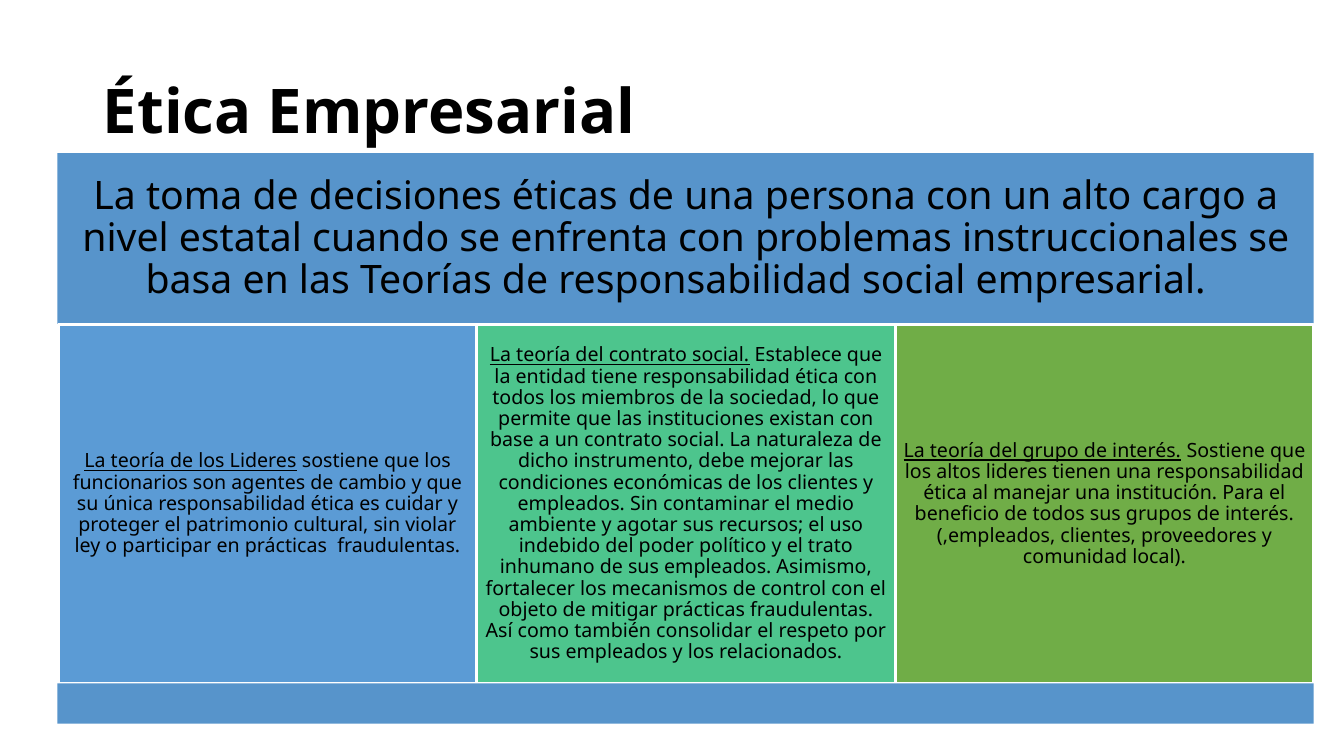
from dataclasses import dataclass

import pptx
import pptx.dml.color
import pptx.enum.shapes
import pptx.enum.text
import pptx.shapes.autoshape
import pptx.slide
import pptx.text.text
import pptx.util

Inches = pptx.util.Inches
RGBColor = pptx.dml.color.RGBColor
Align = pptx.enum.text.PP_ALIGN

BLACK = RGBColor(0x00, 0x00, 0x00)
WHITE = RGBColor(0xFF, 0xFF, 0xFF)
BAND_BLUE = RGBColor(0x57, 0x94, 0xCB)
LEADERS_BLUE = RGBColor(0x5B, 0x9B, 0xD5)
CONTRACT_GREEN = RGBColor(0x4D, 0xC5, 0x8D)
INTEREST_GREEN = RGBColor(0x70, 0xAD, 0x47)

FONT = "Noto Sans"
BAND_LEFT, BAND_WIDTH = 0.57, 12.46
THEORY_LEFT, THEORY_TOP = 0.58, 3.22
THEORY_WIDTH, THEORY_HEIGHT = 4.15, 3.56


@dataclass(frozen=True)
class Theory:
    name: str
    description: str
    color: RGBColor


INTRODUCTION = (
    "La toma de decisiones éticas de una persona con un alto cargo a nivel estatal "
    "cuando se enfrenta con problemas instruccionales se basa en las Teorías de "
    "responsabilidad social empresarial.  "
)

THEORIES = [
    Theory(
        "La teoría de los Lideres",
        " sostiene que los funcionarios son agentes de cambio y que su única "
        "responsabilidad ética es cuidar y proteger el patrimonio cultural, sin violar "
        "ley o participar en prácticas  fraudulentas.",
        LEADERS_BLUE,
    ),
    Theory(
        "La teoría del contrato social.",
        " Establece que la entidad tiene responsabilidad ética con todos los miembros "
        "de la sociedad, lo que permite que las instituciones existan con base a un "
        "contrato social. La naturaleza de dicho instrumento, debe mejorar las "
        "condiciones económicas de los clientes y empleados. Sin contaminar el medio "
        "ambiente y agotar sus recursos; el uso indebido del poder político y el trato "
        "inhumano de sus empleados. Asimismo, fortalecer los mecanismos de control con "
        "el objeto de mitigar prácticas fraudulentas. Así como también consolidar el "
        "respeto por sus empleados y los relacionados.",
        CONTRACT_GREEN,
    ),
    Theory(
        "La teoría del grupo de interés.",
        " Sostiene que los altos lideres tienen una responsabilidad ética al manejar "
        "una institución. Para el beneficio de todos sus grupos de interés. "
        "(,empleados, clientes, proveedores y comunidad local).",
        INTEREST_GREEN,
    ),
]


def write_text(
    frame: pptx.text.text.TextFrame,
    text: str,
    *,
    size: float,
    underlined: str = "",
    bold: bool = False,
    align: Align = Align.CENTER,
    margins: tuple[float, float] = (0.06, 0.06),
) -> None:
    frame.word_wrap = True
    frame.auto_size = pptx.enum.text.MSO_AUTO_SIZE.NONE
    frame.vertical_anchor = pptx.enum.text.MSO_ANCHOR.MIDDLE
    frame.margin_left = frame.margin_right = Inches(margins[0])
    frame.margin_top = frame.margin_bottom = Inches(margins[1])
    paragraph = frame.paragraphs[0]
    paragraph.alignment = align
    paragraph.line_spacing = 0.9
    paragraph.space_before = pptx.util.Pt(0)
    for content, underline in ((underlined, True), (text, False)):
        if content:
            run = paragraph.add_run()
            run.text = content
            run.font.name = FONT
            run.font.size = pptx.util.Pt(size)
            run.font.bold = bold
            run.font.underline = underline
            run.font.color.rgb = BLACK


def add_block(
    slide: pptx.slide.Slide,
    left: float,
    top: float,
    width: float,
    height: float,
    color: RGBColor,
    outlined: bool = False,
) -> pptx.shapes.autoshape.Shape:
    shape = slide.shapes.add_shape(
        pptx.enum.shapes.MSO_SHAPE.RECTANGLE,
        Inches(left), Inches(top), Inches(width), Inches(height),
    )
    shape.shadow.inherit = False
    shape.fill.solid()
    shape.fill.fore_color.rgb = color
    if outlined:
        shape.line.color.rgb = WHITE
        shape.line.width = pptx.util.Pt(2)
    else:
        shape.line.fill.background()
    return shape


def main() -> None:
    presentation = pptx.Presentation()
    presentation.slide_width = Inches(13.33)
    presentation.slide_height = Inches(7.5)
    slide = presentation.slides.add_slide(presentation.slide_layouts[5])

    title = slide.shapes.title
    title.left, title.top = Inches(0.92), Inches(0.4)
    title.width, title.height = Inches(11.5), Inches(1.45)
    write_text(title.text_frame, "Ética Empresarial", size=44, bold=True,
               align=Align.LEFT, margins=(0.1, 0.05))

    header = add_block(slide, BAND_LEFT, 1.52, BAND_WIDTH, 1.7, BAND_BLUE)
    write_text(header.text_frame, INTRODUCTION, size=28, margins=(0.12, 0.12))

    for index, theory in enumerate(THEORIES):
        block = add_block(slide, THEORY_LEFT + index * THEORY_WIDTH, THEORY_TOP,
                          THEORY_WIDTH, THEORY_HEIGHT, theory.color, outlined=True)
        write_text(block.text_frame, theory.description, size=14, underlined=theory.name)

    add_block(slide, BAND_LEFT, THEORY_TOP + THEORY_HEIGHT, BAND_WIDTH, 0.4, BAND_BLUE)
    presentation.save("out.pptx")


if __name__ == "__main__":
    main()
